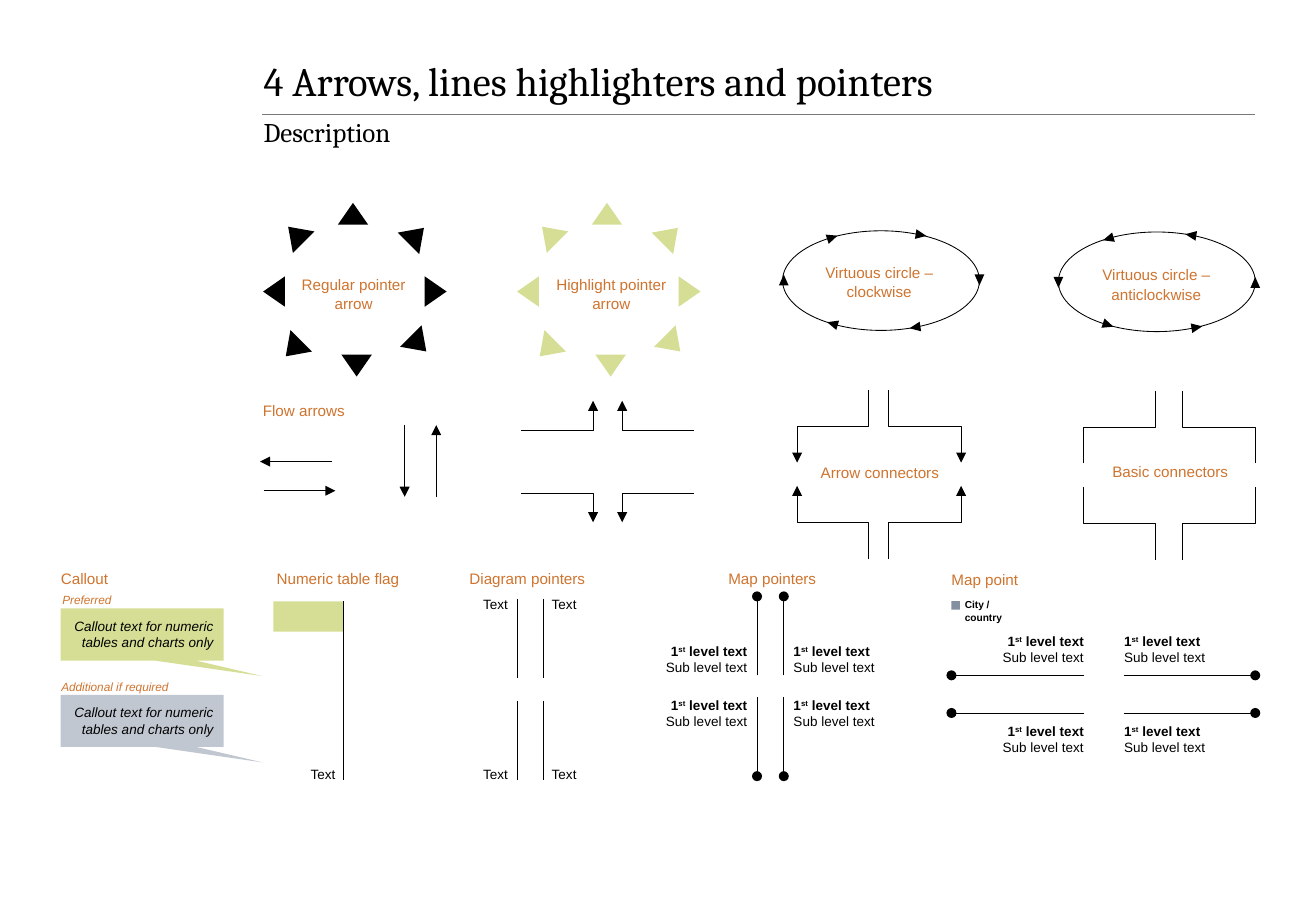
from lxml import etree
from pptx import Presentation
from pptx import util as u
from pptx.dml.color import RGBColor
from pptx.enum import shapes, text
from pptx.oxml import ns

BLACK = RGBColor(0x00, 0x00, 0x00)
ORANGE = RGBColor(0xCF, 0x74, 0x2F)
LIME = RGBColor(0xD5, 0xDE, 0x94)
RULE_GREY = RGBColor(0x78, 0x78, 0x78)
SLATE = RGBColor(0x84, 0x8F, 0xA0)
PALE_SLATE = RGBColor(0xC1, 0xC7, 0xD0)

LEFT, CENTER, RIGHT = text.PP_ALIGN.LEFT, text.PP_ALIGN.CENTER, text.PP_ALIGN.RIGHT
TOP, MIDDLE, BOTTOM = text.MSO_ANCHOR.TOP, text.MSO_ANCHOR.MIDDLE, text.MSO_ANCHOR.BOTTOM
KIND = shapes.MSO_SHAPE


def inches(*values):
    return [u.Inches(value) for value in values]


def add_span(para, words, size=8, font="Arial", color=BLACK, bold=False, italic=False, raised=False):
    span = para.add_run()
    span.text = words
    span.font.size = u.Pt(size)
    span.font.name = font
    span.font.color.rgb = color
    span.font.bold = bold
    span.font.italic = italic
    if raised:
        span.font._element.set("baseline", "30000")


class Sheet:
    """Draws on one slide in its thin-line style."""

    def __init__(self, slide):
        self.shapes = slide.shapes
        self.line_width = u.Pt(0.5)

    def fill_text(self, box, lines, align=LEFT, anchor=TOP, insets=(0, 0, 0, 0), wrap=True, spacing=1.0, **style):
        """Fill a box; each line is a string or a list of (words, style) pairs."""
        frame = box.text_frame
        frame.word_wrap = wrap
        frame.vertical_anchor = anchor
        frame.margin_left, frame.margin_top, frame.margin_right, frame.margin_bottom = inches(*insets)
        for index, line in enumerate(lines):
            para = frame.add_paragraph() if index else frame.paragraphs[0]
            para.alignment = align
            para.line_spacing = spacing
            for words, extra in [(line, {})] if isinstance(line, str) else line:
                add_span(para, words, **{**style, **extra})

    def text(self, words, left, top, width, height, **style):
        lines = [words] if isinstance(words, str) else words
        self.fill_text(self.shapes.add_textbox(*inches(left, top, width, height)), lines, **style)

    def label(self, words, left, top, width, height=0.16, **style):
        style = {"align": CENTER, "spacing": 1.05, "size": 9, "color": ORANGE, "wrap": False, **style}
        self.text(words, left, top, width, height, **style)

    def shape(self, kind, left, top, width, height, fill=None, rotation=0):
        shape = self.shapes.add_shape(kind, *inches(left, top, width, height))
        shape.rotation = rotation
        shape.shadow.inherit = False
        if fill is None:
            shape.fill.background()
            self.stroke(shape)
        else:
            shape.fill.solid()
            shape.fill.fore_color.rgb = fill
            shape.line.fill.background()
        return shape

    def stroke(self, item, end=None, color=BLACK):
        item.line.color.rgb = color
        item.line.width = self.line_width
        if end:
            etree.SubElement(item.line._get_or_add_ln(), ns.qn("a:tailEnd"), type=end)

    def line(self, x1, y1, x2, y2, end=None, color=BLACK, kind=shapes.MSO_CONNECTOR.STRAIGHT):
        connector = self.shapes.add_connector(kind, *inches(x1, y1, x2, y2))
        self.stroke(connector, end, color)
        etree.SubElement(connector._element.spPr, ns.qn("a:effectLst"))
        return connector

    def elbow(self, x1, y1, x2, y2, end=None):
        """Elbow that leaves and arrives vertically: a horizontal one, turned a quarter."""
        turn = 1 if (x2 - x1) * (y2 - y1) < 0 else -1
        center_x, center_y = (x1 + x2) / 2, (y1 + y2) / 2
        run, rise = turn * (y2 - y1) / 2, turn * (x2 - x1) / 2
        connector = self.line(center_x - run, center_y + rise, center_x + run, center_y - rise,
                              end, kind=shapes.MSO_CONNECTOR.ELBOW)
        connector._element.spPr.xfrm.set("rot", str(turn * 90 % 360 * 60000))

    def corner(self, points, end):
        start, *rest = [inches(*point) for point in points]
        builder = self.shapes.build_freeform(*start)
        builder.add_line_segments(rest, close=False)
        corner = builder.convert_to_shape()
        corner.shadow.inherit = False
        corner.fill.background()
        self.stroke(corner, end)

    def callout(self, top, fill):
        callout = self.shape(KIND.RECTANGULAR_CALLOUT, 0.5, top, 1.34, 0.43, fill)
        callout.adjustments[0], callout.adjustments[1] = 0.739, 0.795
        self.fill_text(callout, ["Callout text for numeric tables and charts only"], align=RIGHT,
                       insets=(0.04, 0.08, 0.08, 0.08), italic=True)


def draw_heading(sheet):
    sheet.line(2.16, 0.94, 10.33, 0.94, color=RULE_GREY)
    sheet.text("4 Arrows, lines highlighters and pointers", 2.17, 0.53, 8.16, 0.39, anchor=MIDDLE,
               insets=(0, 0, 0, 0.12), size=24, font="Cambria")
    sheet.text("Description", 2.17, 0.95, 8.17, 0.35, insets=(0, 0, 0, 0.12), size=16, font="Cambria")


def draw_pointer_rings(sheet):
    ring = [(2.78, 1.67), (3.3, 1.85), (3.46, 2.31), (3.32, 2.74),
            (2.81, 2.92), (2.29, 2.78), (2.13, 2.31), (2.31, 1.84)]
    for shift, fill in ((0, BLACK), (2.09, LIME)):
        for step, (left, top) in enumerate(ring):
            sheet.shape(KIND.ISOSCELES_TRIANGLE, left + shift, top, 0.25, 0.18, fill, step * 45)


def draw_virtuous_circles(sheet):
    clockwise = [(6.41, 2.26, 0), (8.02, 2.26, 180), (7.54, 1.89, 99.6),
                 (7.49, 2.65, 261), (6.81, 2.62, 286.5), (6.81, 1.91, 71.3)]
    anticlockwise = [(8.67, 2.28, 180), (10.29, 2.28, 0), (9.81, 2.65, 80.4),
                     (9.76, 1.89, 279), (9.08, 1.92, 253.5), (9.08, 2.63, 108.7)]
    for left, top, heads in ((6.44, 1.9, clockwise), (8.71, 1.91, anticlockwise)):
        sheet.shape(KIND.OVAL, left, top, 1.62, 0.82)
        for x, y, rotation in heads:
            sheet.shape(KIND.ISOSCELES_TRIANGLE, x, y, 0.08, 0.09, BLACK, rotation)


def draw_labels(sheet):
    for words, left, top, width in (
            ("Regular pointer arrow", 2.44, 2.26, 0.94), ("Highlight pointer arrow", 4.54, 2.26, 0.98),
            ("Virtuous circle –clockwise", 6.53, 2.16, 1.41),
            ("Virtuous circle – anticlockwise", 8.76, 2.18, 1.51)):
        sheet.label(words, left, top, width, 0.32, wrap=True)
    for words, left, top, width in (
            ("Flow arrows", 2.16, 3.3, 0.68), ("Arrow connectors", 6.75, 3.81, 0.98),
            ("Basic connectors", 9.15, 3.8, 0.96), ("Callout", 0.5, 4.68, 0.39),
            ("Numeric table flag", 2.27, 4.68, 1.02), ("Diagram pointers", 3.86, 4.68, 0.96),
            ("Map pointers", 5.99, 4.68, 0.73)):
        sheet.label(words, left, top, width)
    sheet.label("Map point", 7.83, 4.69, 1.67, 0.18, align=LEFT, wrap=True)
    sheet.label("Preferred", 0.51, 4.87, 0.41, 0.12, size=7, italic=True)
    sheet.label("Additional if required", 0.5, 5.59, 0.89, 0.12, size=7, italic=True)


def draw_flow_arrows(sheet):
    for ends in ((2.17, 4.04, 2.76, 4.04), (2.73, 3.8, 2.14, 3.8),
                 (3.33, 3.5, 3.33, 4.09), (3.59, 4.09, 3.59, 3.5)):
        sheet.line(*ends, end="triangle")
    for y, tip in ((3.54, 3.3), (4.06, 4.3)):
        for outer, inner in ((4.29, 4.88), (5.71, 5.12)):
            sheet.corner([(outer, y), (inner, y), (inner, tip)], "triangle")


def draw_connectors(sheet):
    for columns, rows, end in (
            (((7.15, 6.56), (7.31, 7.91)), ((3.21, 3.81), (4.6, 4.0)), "triangle"),
            (((9.51, 8.92), (9.73, 10.33)), ((3.22, 3.81), (4.61, 4.01)), None)):
        for x1, x2 in columns:
            for y1, y2 in rows:
                sheet.elbow(x1, y1, x2, y2, end)


def draw_callouts_and_flag(sheet):
    sheet.callout(5.01, LIME)
    sheet.callout(5.72, PALE_SLATE)
    sheet.shape(KIND.RECTANGLE, 2.25, 4.95, 0.58, 0.25, LIME)
    sheet.line(2.83, 6.42, 2.83, 4.95)
    sheet.text("Text", 1.99, 6.07, 0.85, 0.37, align=RIGHT, anchor=BOTTOM, insets=(0, 0, 0.08, 0))


def draw_diagram_pointers(sheet):
    for x, text_left, align in ((4.26, 3.33, RIGHT), (4.47, 4.54, LEFT)):
        for y1, y2, text_top, anchor in ((4.93, 5.58, 4.91, TOP), (5.77, 6.42, 6.07, BOTTOM)):
            sheet.line(x, y1, x, y2)
            sheet.text("Text", text_left, text_top, 0.85, 0.37, align=align, anchor=anchor)


def draw_map_pointers(sheet):
    bold = {"bold": True}
    levels = [[("1", bold), ("st", {"bold": True, "raised": True}), (" level text", bold)], "Sub level text"]
    for x, left, align in ((6.23, 5.35, RIGHT), (6.45, 6.45, LEFT)):
        for start, dot, top, height, anchor, base in ((5.56, 4.91, 5.06, 0.5, BOTTOM, 0),
                                                      (5.74, 6.39, 5.74, 0.57, TOP, 0.08)):
            sheet.line(x, start, x, dot, end="oval")
            sheet.text(levels, left, top, 0.88, height, align=align, anchor=anchor,
                       insets=(0.08, 0, 0.08, base))
    for start, dot, left, align in ((8.92, 7.83, 8.04, RIGHT), (9.25, 10.33, 9.25, LEFT)):
        for y, top, anchor in ((5.56, 5.13, BOTTOM), (5.87, 5.87, TOP)):
            sheet.line(start, y, dot, y, end="oval")
            sheet.text(levels, left, top, 0.88, 0.43, align=align, anchor=anchor,
                       insets=(0, 0.08, 0, 0.08))
    sheet.shape(KIND.RECTANGLE, 7.83, 4.95, 0.07, 0.07, SLATE)
    sheet.text("City / country", 7.94, 4.93, 0.53, 0.1, wrap=False, size=6, bold=True)


def main():
    deck = Presentation()
    deck.slide_width, deck.slide_height = inches(10.83, 7.5)
    sheet = Sheet(deck.slides.add_slide(deck.slide_layouts[6]))
    for draw in (draw_heading, draw_pointer_rings, draw_virtuous_circles, draw_labels, draw_flow_arrows,
                 draw_connectors, draw_callouts_and_flag, draw_diagram_pointers, draw_map_pointers):
        draw(sheet)
    deck.save("out.pptx")


if __name__ == "__main__":
    main()
